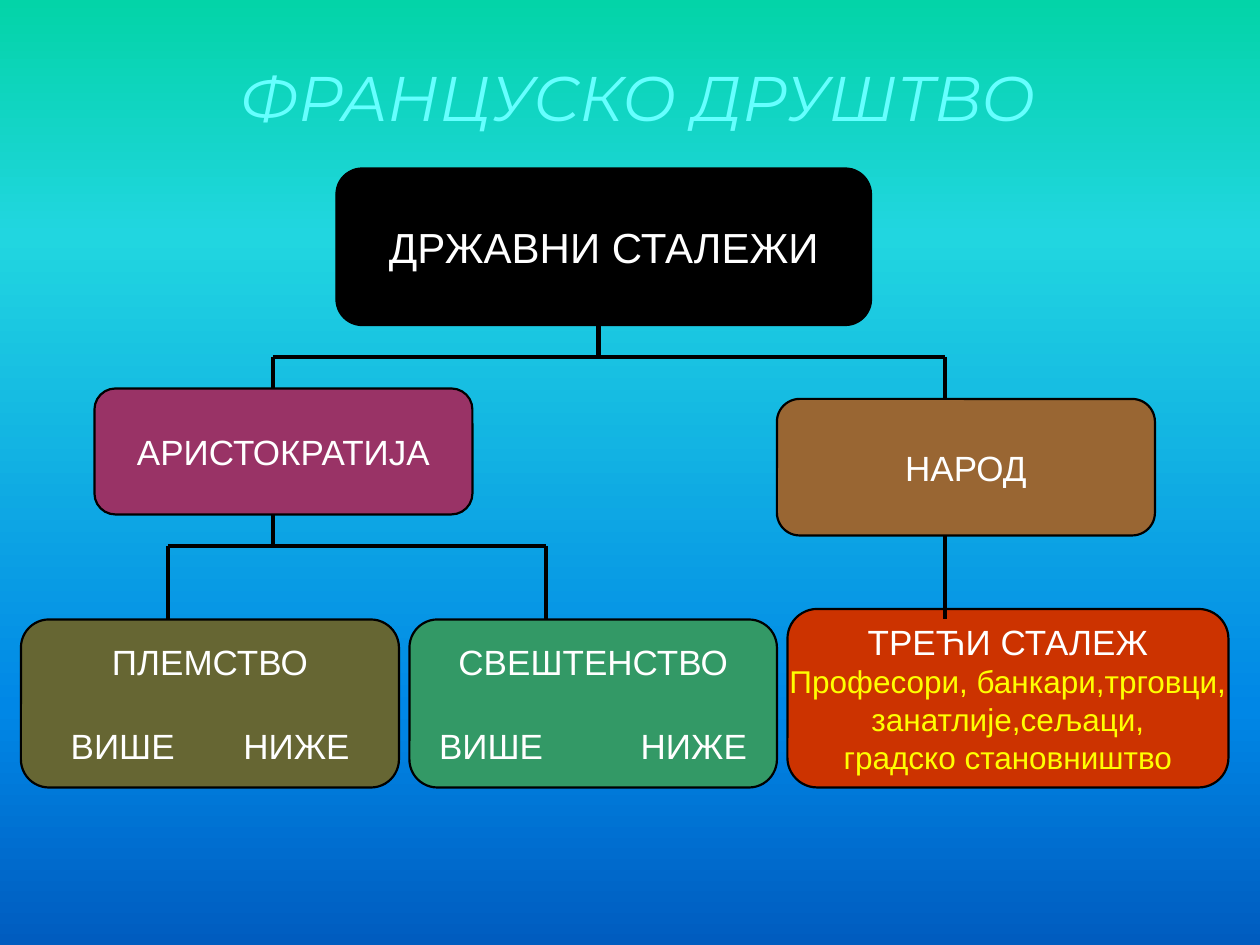
import copy
import lxml.etree
import pptx
import pptx.dml.color
import pptx.enum.shapes
import pptx.enum.text
import pptx.oxml
import pptx.oxml.ns
import pptx.util

HUES = {
    "mint": "03D4A8", "aqua": "21D6E0", "azure": "0087E6", "navy": "005CBF",
    "cyan": "66FFFF", "white": "FFFFFF", "black": "000000", "yellow": "FFFF00",
    "plum": "993366", "brown": "996633", "olive": "666633",
    "green": "339966", "red": "CC3300",
}
UNIT = pptx.util.Inches(1) / 12
Pt = pptx.util.Pt
qn = pptx.oxml.ns.qn


def hue(name):
    """Return the named colour."""
    return pptx.dml.color.RGBColor.from_string(HUES[name])


def grid(*cells):
    """Turn cells of a 120 by 90 grid into lengths."""
    return [pptx.util.Emu(round(cell * UNIT)) for cell in cells]


def blend(fill, stops):
    """Fill from top to bottom through the given stops."""
    fill.gradient()
    fill.gradient_angle = 270
    first = fill.gradient_stops[0]
    tree = first._gs.getparent()
    while len(tree) < len(stops):
        tree.insert(1, copy.deepcopy(tree[0]))
    for stop, (place, name) in zip(fill.gradient_stops, stops):
        stop.position = place
        stop.color.rgb = hue(name)


def style(para, size, name):
    """Centre a paragraph and set its font."""
    para.alignment = pptx.enum.text.PP_ALIGN.CENTER
    for run in para.runs:
        run.font.size = Pt(size)
        run.font.name = "Arial"
        run.font.color.rgb = hue(name)


def title(slide, text):
    """Add the slanted heading with its outlined letters."""
    box = slide.shapes.add_textbox(*grid(20.8, 5, 80, 5))
    frame = box.text_frame
    frame.word_wrap = False
    frame.margin_left = frame.margin_right = 0
    frame.text = text
    para = frame.paragraphs[0]
    style(para, 36, "cyan")
    font = para.runs[0].font
    font.name = "Montserrat"
    font.italic = True
    blend(font.fill, [(0, "cyan"), (1, "white")])
    edge = pptx.oxml.parse_xml(
        f'<a:ln {pptx.oxml.ns.nsdecls("a")} w="9525"><a:solidFill>'
        f'<a:srgbClr val="{HUES["black"]}"/></a:solidFill></a:ln>')
    para.runs[0]._r.get_or_add_rPr().insert(0, edge)


def card(slide, cells, name, rows, size=20, width=1.25):
    """Add a rounded box with centred rows of text, size and colour."""
    kind = pptx.enum.shapes.MSO_SHAPE.ROUNDED_RECTANGLE
    box = slide.shapes.add_shape(kind, *grid(*cells))
    box.shadow.inherit = False
    box.fill.solid()
    box.fill.fore_color.rgb = hue(name)
    box.line.color.rgb = hue("black")
    box.line.width = Pt(width)
    frame = box.text_frame
    frame.word_wrap = False
    frame.vertical_anchor = pptx.enum.text.MSO_ANCHOR.MIDDLE
    frame.margin_left = frame.margin_right = 0
    frame.margin_top = frame.margin_bottom = 0
    frame.text = "\n".join(row[0] for row in rows)
    for para, row in zip(frame.paragraphs, rows):
        style(para, *(row[1:] or (size, "white")))
    return frame


def split(slide, cells, name, head, stops):
    """Add a box whose lower row holds two words at tab stops."""
    frame = card(slide, cells, name, [(head,), ("\tВИШЕ\tНИЖЕ",)])
    frame.word_wrap = True
    para = frame.paragraphs[1]
    para.alignment = pptx.enum.text.PP_ALIGN.LEFT
    para.space_before = Pt(24)
    tabs = lxml.etree.SubElement(para._p.get_or_add_pPr(), qn("a:tabLst"))
    for stop in stops:
        place = str(pptx.util.Inches(stop))
        lxml.etree.SubElement(tabs, qn("a:tab"), pos=place, algn="l")


def line(slide, *cells):
    """Draw a straight black line between two grid points."""
    kind = pptx.enum.shapes.MSO_CONNECTOR.STRAIGHT
    link = slide.shapes.add_connector(kind, *grid(*cells))
    link.line.color.rgb = hue("black")
    link.line.width = Pt(2.5)
    lxml.etree.SubElement(link._element.spPr, qn("a:effectLst"))


def fork(slide, stem, top, bar, ends):
    """Join a parent to its children through a level bar."""
    line(slide, stem, top, stem, bar)
    line(slide, ends[0][0], bar, ends[-1][0], bar)
    for col, row in ends:
        line(slide, col, bar, col, row)


def main():
    """Build the chart of the estates."""
    deck = pptx.Presentation()
    deck.slide_width, deck.slide_height = grid(120, 90)
    slide = deck.slides.add_slide(deck.slide_layouts[6])
    blend(slide.background.fill,
          [(0, "mint"), (0.25, "aqua"), (0.75, "azure"), (1, "navy")])
    title(slide, "ФРАНЦУСКО ДРУШТВО")
    card(slide, (32, 16, 51, 15), "black", [("ДРЖАВНИ СТАЛЕЖИ",)], 24, 0.75)
    card(slide, (9, 37, 36, 12), "plum", [("АРИСТОКРАТИЈА",)])
    card(slide, (74, 38, 36, 13), "brown", [("НАРОД",)])
    split(slide, (2, 59, 36, 16), "olive", "ПЛЕМСТВО", (0.33, 1.7))
    split(slide, (39, 59, 35, 16), "green", "СВЕШТЕНСТВО", (0.17, 1.77))
    card(slide, (75, 58, 42, 17), "red", [
        ("ТРЕЋИ СТАЛЕЖ",),
        ("Професори, банкари,трговци,", 18, "yellow"),
        ("занатлије,сељаци,", 18, "yellow"),
        ("градско становништво", 18, "yellow"),
    ])
    fork(slide, 57, 31, 34, [(26, 37), (90, 38)])
    fork(slide, 26, 49, 52, [(16, 59), (52, 59)])
    line(slide, 90, 51, 90, 59)
    deck.save("out.pptx")


if __name__ == "__main__":
    main()
